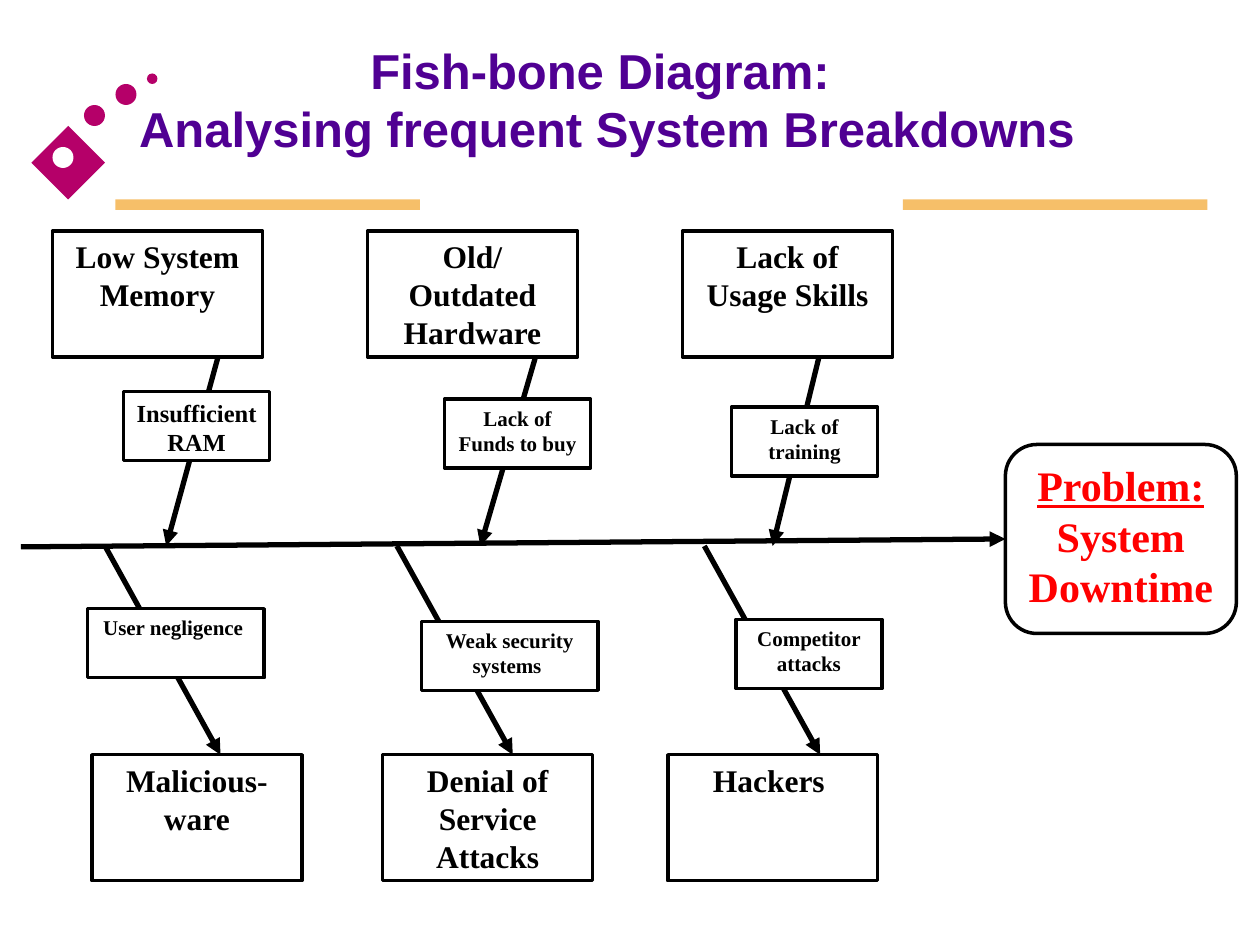
from typing import NamedTuple

from lxml import etree
from pptx import Presentation
from pptx.dml.color import RGBColor
from pptx.enum import shapes, text
from pptx.oxml.ns import qn
from pptx.util import Pt

BLACK = RGBColor(0x00, 0x00, 0x00)
WHITE = RGBColor(0xFF, 0xFF, 0xFF)
RED = RGBColor(0xFF, 0x00, 0x00)
PURPLE = RGBColor(0x50, 0x00, 0x93)
MAGENTA = RGBColor(0xB5, 0x00, 0x69)
AMBER = RGBColor(0xF6, 0xBF, 0x69)

RECT = shapes.MSO_SHAPE.RECTANGLE
ROUNDED = shapes.MSO_SHAPE.ROUNDED_RECTANGLE
DIAMOND = shapes.MSO_SHAPE.DIAMOND
OVAL = shapes.MSO_SHAPE.OVAL

CAUSE_W, CAUSE_H = 120, 72
LABEL_H = 39.5
TOP_Y, SPINE_Y, BOTTOM_Y = 132, 312, 431.3


class Ornament(NamedTuple):
    kind: int
    x: float
    y: float
    w: float
    h: float
    color: RGBColor


class Bone(NamedTuple):
    """A cause box, its arrow and the label that sits on the arrow."""
    cause: str
    x: float
    y: float
    start: tuple[float, float]
    end: tuple[float, float]
    label: str
    label_x: float
    label_y: float
    label_w: float = 83.5
    label_size: float = 12


ORNAMENTS = [
    Ornament(RECT, 66, 114, 174, 6, AMBER),
    Ornament(DIAMOND, 18, 72, 42, 42, MAGENTA),
    Ornament(OVAL, 30, 84, 12, 12, WHITE),
    Ornament(OVAL, 48, 60, 12, 12, MAGENTA),
    Ornament(OVAL, 66, 48, 12, 12, MAGENTA),
    Ornament(OVAL, 84, 42, 6, 6, MAGENTA),
    Ornament(RECT, 516, 114, 174, 6, AMBER),
]

BONES = [
    Bone("Low System Memory", 30, TOP_Y, (124.6, 204), (95, SPINE_Y),
         "Insufficient RAM", 70.6, 223.8, label_size=14),
    Bone("Old/ Outdated Hardware", 210, TOP_Y, (306, 204), (274.5, SPINE_Y),
         "Lack of Funds to buy", 254, 228),
    Bone("Lack of Usage Skills", 390, TOP_Y, (468, 204), (441.5, SPINE_Y),
         "Lack of training", 418, 232.6),
    Bone("Malicious- ware", 52.5, BOTTOM_Y, (60, SPINE_Y), (126, BOTTOM_Y),
         "User negligence ", 50, 347.8, label_w=101),
    Bone("Denial of Service Attacks", 218.7, BOTTOM_Y, (226.8, SPINE_Y), (293, BOTTOM_Y),
         "Weak security systems ", 240.8, 355, label_w=101),
    Bone("Hackers ", 381.6, BOTTOM_Y, (402.5, SPINE_Y), (468.7, BOTTOM_Y),
         "Competitor attacks", 420.5, 354),
]


def write(p, content: str, *, size: float, color: RGBColor = BLACK,
          font: str = "Times New Roman", underline: bool = False) -> None:
    p.text = content
    p.alignment = text.PP_ALIGN.CENTER
    for br in p._p.findall(qn("a:br")):
        etree.SubElement(br, qn("a:rPr"), sz=str(int(size * 100)))
    for r in p.runs:
        r.font.name = font
        r.font.size = Pt(size)
        r.font.bold = True
        r.font.underline = underline
        r.font.color.rgb = color


def add_shape(s, kind: int, x: float, y: float, w: float, h: float, fill: RGBColor):
    sp = s.shapes.add_shape(kind, Pt(x), Pt(y), Pt(w), Pt(h))
    sp.shadow.inherit = False
    sp.fill.solid()
    sp.fill.fore_color.rgb = fill
    sp.line.fill.background()
    return sp


def add_box(s, x: float, y: float, w: float, h: float, kind: int = RECT):
    """Add a white box with a black outline and text that starts at its top."""
    sp = add_shape(s, kind, x, y, w, h, WHITE)
    sp.line.color.rgb = BLACK
    sp.line.width = Pt(2)
    sp.text_frame.word_wrap = True
    sp.text_frame.vertical_anchor = text.MSO_ANCHOR.TOP
    return sp


def add_arrow(s, start: tuple[float, float], end: tuple[float, float]):
    line = s.shapes.add_connector(shapes.MSO_CONNECTOR.STRAIGHT,
                                  *(Pt(v) for v in (*start, *end)))
    line.line.color.rgb = BLACK
    line.line.width = Pt(3)
    etree.SubElement(line.line._get_or_add_ln(), qn("a:tailEnd"), type="triangle")
    etree.SubElement(line._element.spPr, qn("a:effectLst"))
    return line


def add_title(s) -> None:
    title = s.shapes.title
    title.left, title.top, title.width, title.height = Pt(-6), Pt(17.5), Pt(705.5), Pt(78)
    tf = title.text_frame
    tf.auto_size = text.MSO_AUTO_SIZE.NONE
    tf.vertical_anchor = text.MSO_ANCHOR.MIDDLE
    write(tf.paragraphs[0], "Fish-bone Diagram: \vAnalysing frequent System Breakdowns",
          size=28, color=PURPLE, font="Arial")


def add_problem(s):
    sp = add_box(s, 574.5, 254, 132, 108, ROUNDED)
    tf = sp.text_frame
    write(tf.paragraphs[0], "Problem:", size=24, color=RED, underline=True)
    write(tf.add_paragraph(), "System Downtime", size=24, color=RED)
    return sp


def main() -> None:
    prs = Presentation()
    prs.slide_width, prs.slide_height = Pt(720), Pt(540)
    s = prs.slides.add_slide(prs.slide_layouts[5])

    for ornament in ORNAMENTS:
        add_shape(s, *ornament)
    add_title(s)

    problem = add_problem(s)
    spine = add_arrow(s, (12, 312.5), (574.5, 308))
    spine.end_connect(problem, 1)

    for b in BONES:
        cause = add_box(s, b.x, b.y, CAUSE_W, CAUSE_H)
        write(cause.text_frame.paragraphs[0], b.cause, size=18)
        add_arrow(s, b.start, b.end)
        label = add_box(s, b.label_x, b.label_y, b.label_w, LABEL_H)
        write(label.text_frame.paragraphs[0], b.label, size=b.label_size)

    prs.save("out.pptx")


if __name__ == "__main__":
    main()
